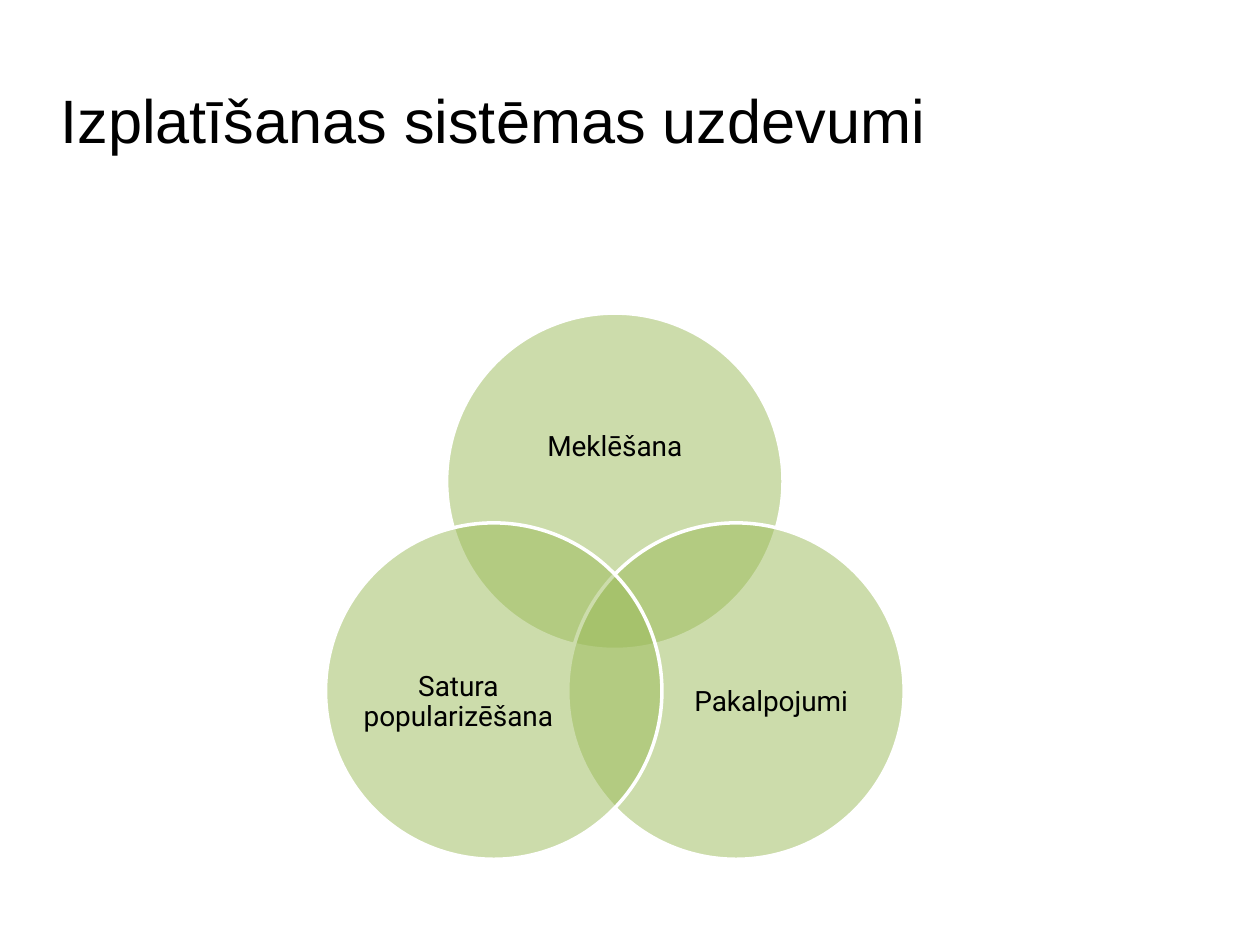
import math
import pptx
import pptx.dml.color
import pptx.enum.shapes
import pptx.enum.text
import pptx.oxml.ns
import pptx.util
from lxml import etree

inch = pptx.util.Inches
W, H = 10, 7.5


def rgb(value):
    return pptx.dml.color.RGBColor.from_string(value)


def add_text(s, text, box, inset, font, size, align, spacing):
    tf = s.shapes.add_textbox(*map(inch, box)).text_frame
    tf.word_wrap = True
    tf.vertical_anchor = pptx.enum.text.MSO_ANCHOR.MIDDLE
    tf.margin_left = tf.margin_right = tf.margin_top = tf.margin_bottom = inch(inset)
    p = tf.paragraphs[0]
    p.alignment = align
    p.line_spacing = spacing
    r = p.add_run()
    r.text = text
    r.font.name = font
    r.font.size = pptx.util.Pt(size)
    r.font.color.rgb = rgb("000000")


prs = pptx.Presentation()
prs.slide_width, prs.slide_height = inch(W), inch(H)
s = prs.slides.add_slide(prs.slide_layouts[6])
align = pptx.enum.text.PP_ALIGN

add_text(s, "Izplatīšanas sistēmas uzdevumi", (0.043 * W, 0.016 * H, 0.8 * W, 0.22 * H),
         0.05, "Arial", 35, align.LEFT, 1.0)

# Three circles sit evenly around the centre of the diagram
diameter = 2.67
orbit = 1.11
mid_x, mid_y = 4.88, 4.93

# name, angle, label offset from the circle's centre, label size
circles = [
    ("Meklēšana", -90, 0, -0.27, 1.96, 1.2),
    ("Pakalpojumi", 30, 0.28, 0.09, 1.6, 1.47),
    ("Satura popularizēšana", 150, -0.28, 0.09, 1.6, 1.47),
]
for name, angle, dx, dy, w, h in circles:
    x = mid_x + orbit * math.cos(math.radians(angle))
    y = mid_y + orbit * math.sin(math.radians(angle))
    sp = s.shapes.add_shape(pptx.enum.shapes.MSO_SHAPE.OVAL, inch(x - diameter / 2),
                            inch(y - diameter / 2), inch(diameter), inch(diameter))
    sp.shadow.inherit = False
    sp.fill.solid()
    sp.fill.fore_color.rgb = rgb("9BBB59")
    color = sp.fill._xPr.find(".//" + pptx.oxml.ns.qn("a:srgbClr"))
    etree.SubElement(color, pptx.oxml.ns.qn("a:alpha"), val="50000")
    sp.line.color.rgb = rgb("FFFFFF")
    sp.line.width = pptx.util.Pt(2)
    add_text(s, name, (x + dx - w / 2, y + dy - h / 2, w, h),
             0, "Roboto", 16, align.CENTER, 0.9)

prs.save("out.pptx")
